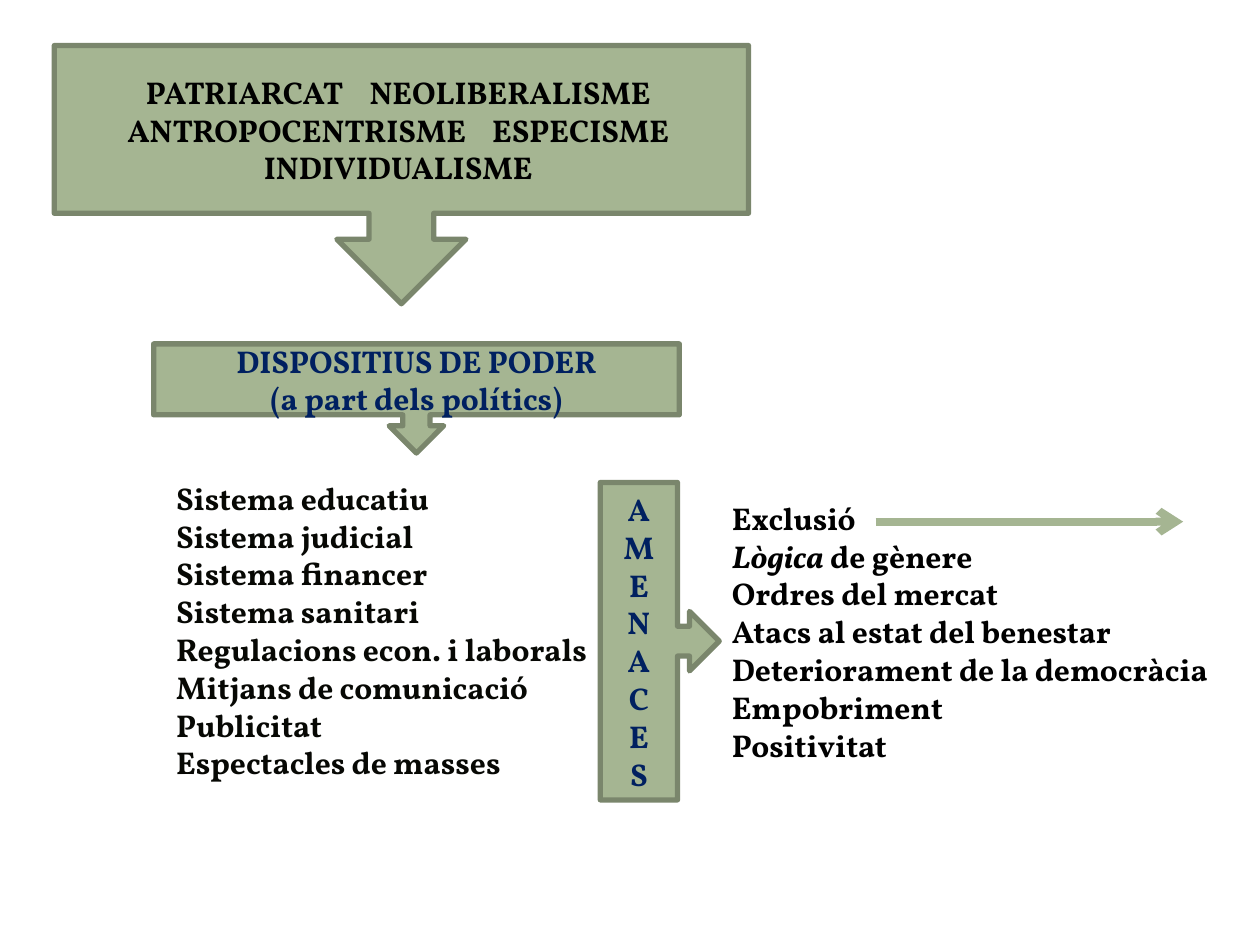
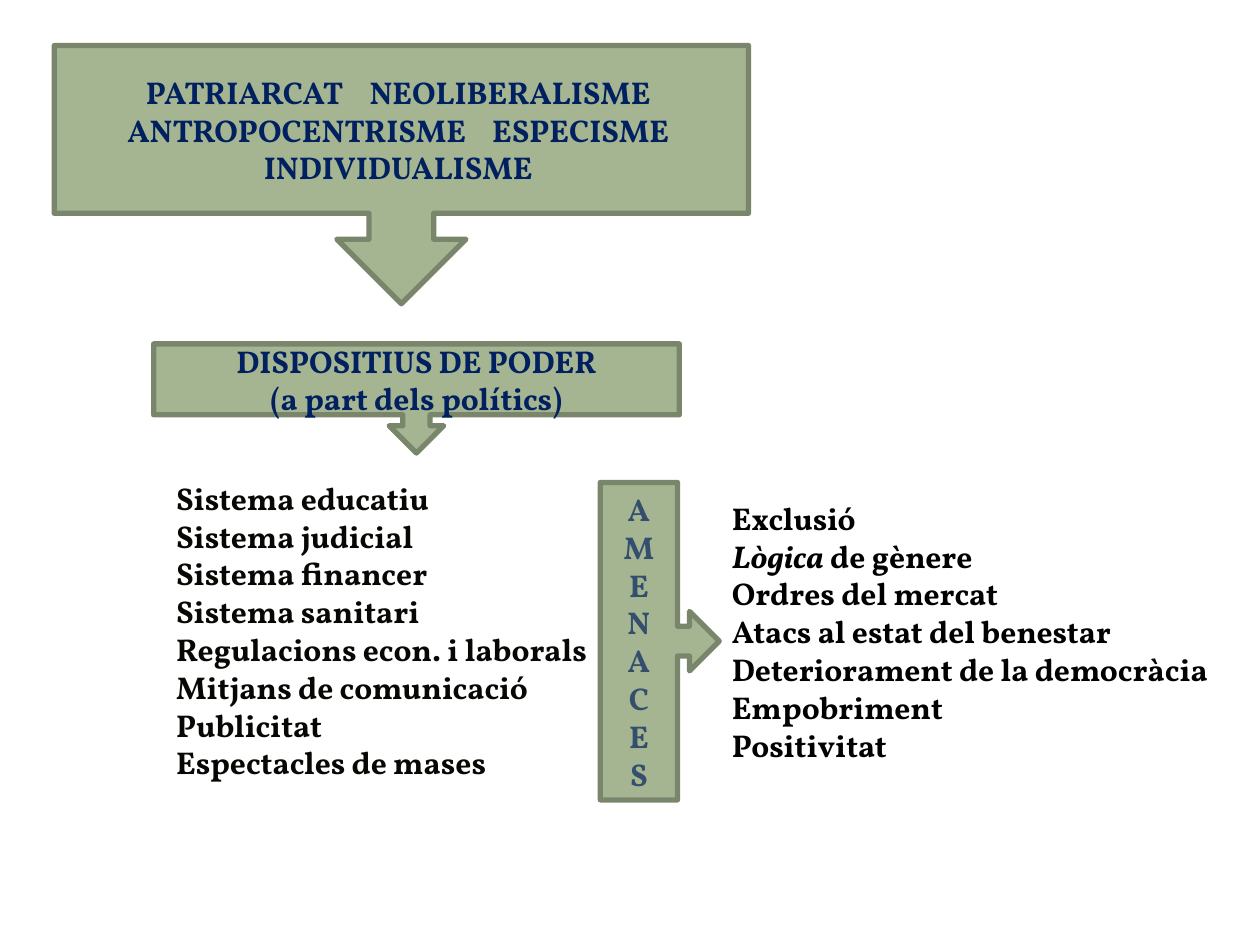
from lxml import etree
from pptx import Presentation
from pptx.dml.color import RGBColor
from pptx.enum.shapes import MSO_CONNECTOR, MSO_SHAPE
from pptx.enum.text import MSO_ANCHOR, MSO_AUTO_SIZE, PP_ALIGN
from pptx.oxml.ns import qn
from pptx.util import Pt

FONT = "Vollkorn"
SAGE = RGBColor(0xA5, 0xB5, 0x92)
DARK_SAGE = RGBColor(0x7A, 0x86, 0x6C)
NAVY = RGBColor(0x00, 0x20, 0x60)
SLATE = RGBColor(0x34, 0x4E, 0x6D)
NEAR_BLACK = RGBColor(0x07, 0x08, 0x04)
BLACK = RGBColor(0x00, 0x00, 0x00)

IDEOLOGIES = [["PATRIARCAT", " ", "NEOLIBERALISME "],
              ["ANTROPOCENTRISME", " ", "ESPECISME "],
              ["INDIVIDUALISME "]]
POWER_DEVICES = [["DISPOSITIUS DE PODER"], ["(a part dels polítics)"]]
SYSTEMS = [["Sistema educatiu"], ["Sistema judicial"], ["Sistema financer"],
           ["Sistema sanitari"], ["Regulacions econ. i laborals"],
           ["Mitjans de comunicació"], ["Publicitat"]]
THREATS = [["Exclusió"], ["Lògica", " de gènere"], ["Ordres del mercat"],
           ["Atacs al estat del benestar"], ["Deteriorament de la democràcia"],
           ["Empobriment"], ["Positivitat"]]
THREATS_LABEL = [[letter] for letter in "AMENACES"]
WIDE_GAP = "1120"  # extra letter spacing, in hundredths of a point


def write_lines(shape, lines, color, alignment):
    """Write one paragraph per line; each line is a list of runs."""
    text_frame = shape.text_frame
    text_frame.word_wrap = True
    for index, pieces in enumerate(lines):
        paragraph = text_frame.add_paragraph() if index else text_frame.paragraphs[0]
        paragraph.alignment = alignment
        for piece in pieces:
            run = paragraph.add_run()
            run.text = piece
            run.font.name = FONT
            run.font.size = Pt(18)
            run.font.bold = True
            run.font.italic = piece == "Lògica"
            run.font.color.rgb = color
            if piece == " ":
                run.font._element.set("spc", WIDE_GAP)


presentation = Presentation()
presentation.slide_width = Pt(720)
presentation.slide_height = Pt(540)
blank_layout = presentation.slide_layouts[6]

# Per slide: ideologies colour, threats label colour, last system, arrow shown
VERSIONS = [(BLACK, NAVY, "Espectacles de masses", True),
            (NAVY, SLATE, "Espectacles de mases", False)]

for ideologies_color, label_color, last_system, has_arrow in VERSIONS:
    slide = presentation.slides.add_slide(blank_layout)

    callouts = [
        (MSO_SHAPE.DOWN_ARROW_CALLOUT, (31, 26, 396.7, 147.6), IDEOLOGIES, ideologies_color),
        (MSO_SHAPE.DOWN_ARROW_CALLOUT, (87.8, 196.5, 300.4, 62.4), POWER_DEVICES, NAVY),
        (MSO_SHAPE.RIGHT_ARROW_CALLOUT, (343, 275.7, 68, 181.4), THREATS_LABEL, label_color),
    ]
    for kind, box, lines, color in callouts:
        callout = slide.shapes.add_shape(kind, *map(Pt, box))
        callout.shadow.inherit = False
        callout.fill.solid()
        callout.fill.fore_color.rgb = SAGE
        callout.line.color.rgb = DARK_SAGE
        callout.line.width = Pt(3)
        callout.text_frame.vertical_anchor = MSO_ANCHOR.MIDDLE
        write_lines(callout, lines, color, PP_ALIGN.CENTER)

    lists = [((93.6, 270, 385.2, 181.4), SYSTEMS + [[last_system]], NEAR_BLACK),
             ((411.1, 281.5, 297.4, 159.8), THREATS, BLACK)]
    for box, lines, color in lists:
        text_box = slide.shapes.add_textbox(*map(Pt, box))
        text_box.text_frame.auto_size = MSO_AUTO_SIZE.SHAPE_TO_FIT_TEXT
        write_lines(text_box, lines, color, PP_ALIGN.LEFT)

    if has_arrow:
        arrow = slide.shapes.add_connector(
            MSO_CONNECTOR.STRAIGHT, Pt(500.4), Pt(298.1), Pt(676.1), Pt(298.1))
        arrow.line.color.rgb = SAGE
        arrow.line.width = Pt(4.5)
        etree.SubElement(arrow.line._get_or_add_ln(), qn("a:tailEnd"), type="arrow")
        etree.SubElement(arrow._element.spPr, qn("a:effectLst"))

presentation.save("out.pptx")
